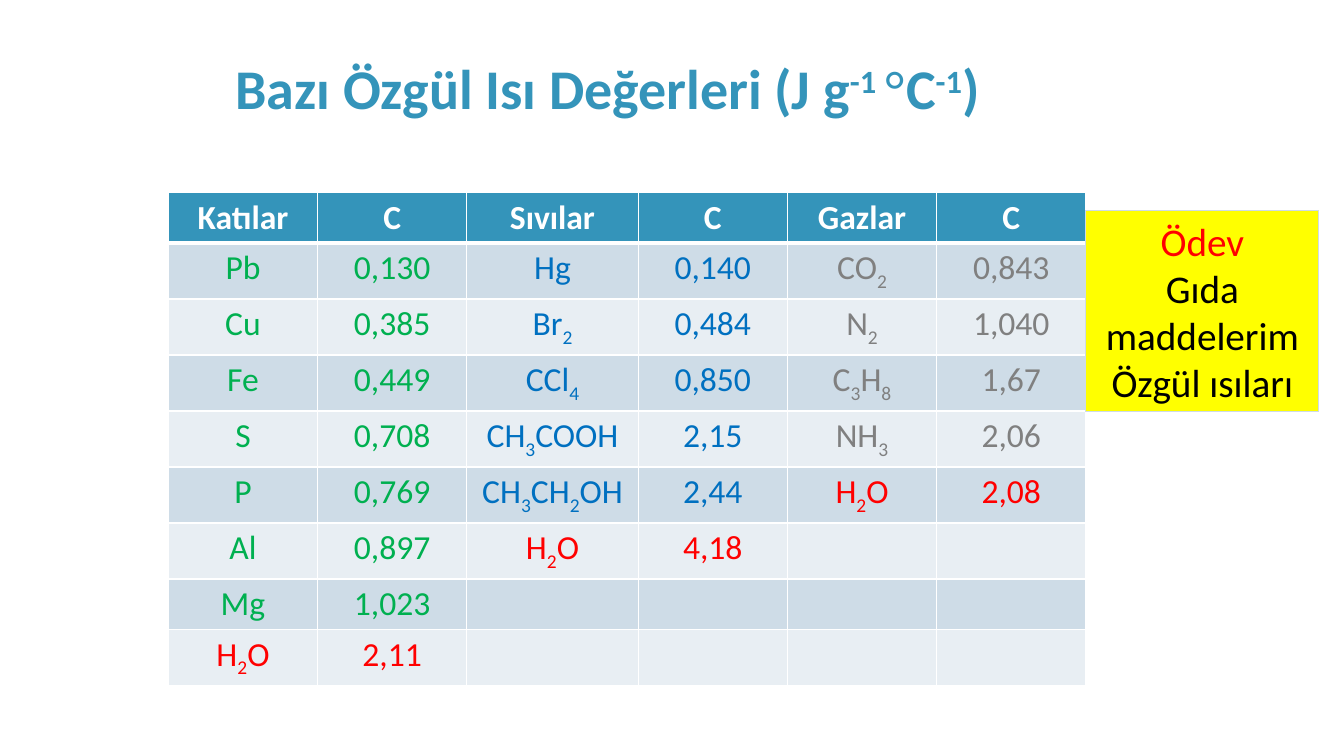
from itertools import groupby, zip_longest

import lxml.etree
import pptx
import pptx.dml.color
import pptx.enum.shapes
import pptx.enum.text
import pptx.oxml.ns
import pptx.util

Inches, Pt = pptx.util.Inches, pptx.util.Pt
RGB = pptx.dml.color.RGBColor.from_string
CENTER = pptx.enum.text.PP_ALIGN.CENTER
ANCHOR = pptx.enum.text.MSO_ANCHOR

THEME = {
    "font": "Calibri", "symbol font": "Times New Roman",
    "title size": 40, "table size": 24, "note size": 28,
    "accent": "3494BA", "white": "FFFFFF", "black": "000000",
    "bands": ("CEDCE7", "E8EEF3"), "water": "FF0000",
    "note fill": "FFFF00", "note line": "CEDBE6",
    "superscript": 30, "subscript": -25,
}

# (text, is superscript, font)
TITLE = [
    ("Bazı Özgül Isı Değerleri (J g", False, "font"),
    ("-1 ", True, "font"),
    ("°", False, "symbol font"),
    ("C", False, "font"),
    ("-1", True, "font"),
    (")", False, "font"),
]
# (heading, colour, [(substance, specific heat)])
GROUPS = [
    ("Katılar", "00B050", [
        ("Pb", "0,130"), ("Cu", "0,385"), ("Fe", "0,449"), ("S", "0,708"),
        ("P", "0,769"), ("Al", "0,897"), ("Mg", "1,023"), ("H2O", "2,11")]),
    ("Sıvılar", "0070C0", [
        ("Hg", "0,140"), ("Br2", "0,484"), ("CCl4", "0,850"),
        ("CH3COOH", "2,15"), ("CH3CH2OH", "2,44"), ("H2O", "4,18")]),
    ("Gazlar", "808080", [
        ("CO2", "0,843"), ("N2", "1,040"), ("C3H8", "1,67"),
        ("NH3", "2,06"), ("H2O", "2,08")]),
]
VALUE_HEADING = "C"
NOTE = [("Ödev", "water"), ("Gıda maddelerim Özgül ısıları", "black")]

TITLE_BOX = (1.67, 0.17, 8.71, 1.08)
TABLE_LEFT, TABLE_TOP, ROW_HEIGHT = 1.67, 1.91, 0.5
COLUMN_WIDTHS = [1.48, 1.48, 1.7, 1.48, 1.48, 1.48]
NOTE_BOX = (10.77, 2.09, 2.31, 1.99)


def add_run(p, text, size, color, bold=False, baseline=0, font="font"):
    r = p.add_run()
    r.text = text
    r.font.name = THEME[font]
    r.font.size = Pt(size)
    r.font.bold = bold
    r.font.color.rgb = RGB(color)
    if baseline:
        r.font._element.set("baseline", str(baseline * 1000))


def add_formula(p, formula, color):
    """Write a chemical formula with its digits as subscripts."""
    for is_digit, chars in groupby(formula, str.isdigit):
        add_run(p, "".join(chars), THEME["table size"], color,
                baseline=THEME["subscript"] if is_digit else 0)


def set_borders(cell, top, bottom):
    tcPr = cell._tc.get_or_add_tcPr()
    qn = pptx.oxml.ns.qn
    for i, (side, width) in enumerate(
            [("lnL", 1), ("lnR", 1), ("lnT", top), ("lnB", bottom)]):
        ln = lxml.etree.Element(qn("a:" + side), w=str(Pt(width)))
        fill = lxml.etree.SubElement(ln, qn("a:solidFill"))
        lxml.etree.SubElement(fill, qn("a:srgbClr"), val=THEME["white"])
        tcPr.insert(i, ln)


def add_title(s):
    tf = s.shapes.add_textbox(*map(Inches, TITLE_BOX)).text_frame
    tf.word_wrap = True
    tf.vertical_anchor = ANCHOR.BOTTOM
    p = tf.paragraphs[0]
    p.alignment = CENTER
    for text, raised, font in TITLE:
        add_run(p, text, THEME["title size"], THEME["accent"], True,
                THEME["superscript"] if raised else 0, font)


def add_heat_table(s):
    rows = list(zip_longest(*(items for _, _, items in GROUPS)))
    table = s.shapes.add_table(
        len(rows) + 1, len(COLUMN_WIDTHS), Inches(TABLE_LEFT), Inches(TABLE_TOP),
        Inches(sum(COLUMN_WIDTHS)), Inches(ROW_HEIGHT * (len(rows) + 1))).table
    for column, width in zip(table.columns, COLUMN_WIDTHS):
        column.width = Inches(width)

    for i in range(len(table.rows)):
        for cell in table.rows[i].cells:
            cell.fill.solid()
            color = THEME["bands"][(i - 1) % 2] if i else THEME["accent"]
            cell.fill.fore_color.rgb = RGB(color)
            set_borders(cell, 3 if i == 1 else 1, 1 if i else 3)
            cell.text_frame.paragraphs[0].alignment = CENTER

    def paragraph(row, col):
        return table.cell(row, col).text_frame.paragraphs[0]

    for g, (heading, group_color, items) in enumerate(GROUPS):
        for col, text in enumerate((heading, VALUE_HEADING), 2 * g):
            add_run(paragraph(0, col), text, THEME["table size"],
                    THEME["white"], True)
        for row, (substance, heat) in enumerate(items, 1):
            color = THEME["water"] if substance == "H2O" else group_color
            add_formula(paragraph(row, 2 * g), substance, color)
            add_run(paragraph(row, 2 * g + 1), heat, THEME["table size"], color)


def add_note(s):
    sp = s.shapes.add_shape(pptx.enum.shapes.MSO_SHAPE.RECTANGLE,
                            *map(Inches, NOTE_BOX))
    sp.shadow.inherit = False
    sp.fill.solid()
    sp.fill.fore_color.rgb = RGB(THEME["note fill"])
    sp.line.color.rgb = RGB(THEME["note line"])
    sp.line.width = Pt(0.75)
    tf = sp.text_frame
    tf.word_wrap = True
    tf.vertical_anchor = ANCHOR.MIDDLE
    for i, (text, color) in enumerate(NOTE):
        p = tf.add_paragraph() if i else tf.paragraphs[0]
        p.alignment = CENTER
        add_run(p, text, THEME["note size"], THEME[color])


def main():
    prs = pptx.Presentation()
    prs.slide_width, prs.slide_height = Inches(13.33), Inches(7.5)
    s = prs.slides.add_slide(prs.slide_layouts[6])
    add_title(s)
    add_heat_table(s)
    add_note(s)
    prs.save("out.pptx")


if __name__ == "__main__":
    main()
